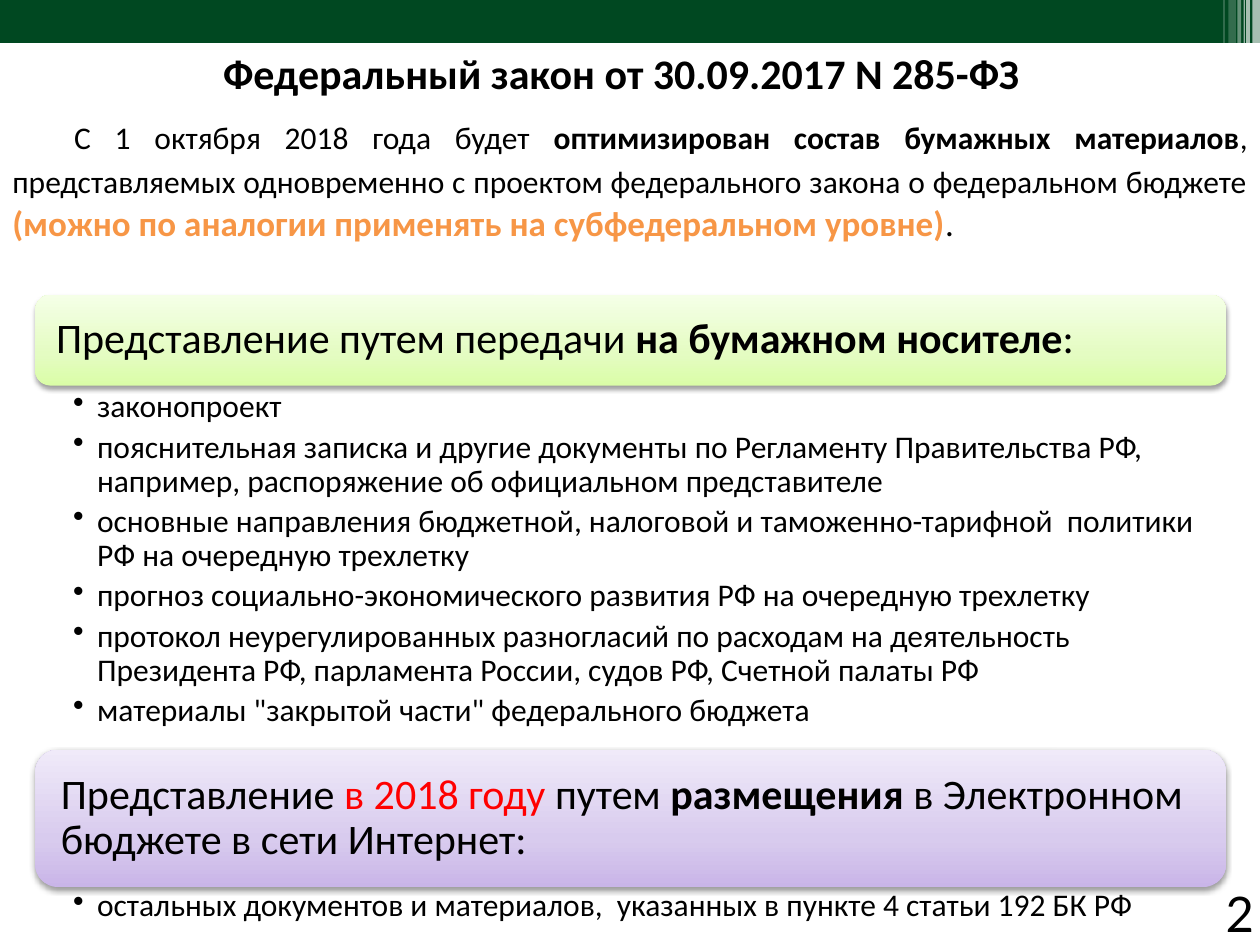
from dataclasses import dataclass
from typing import Optional

from lxml.etree import SubElement
from pptx import Presentation
from pptx.dml.color import RGBColor
from pptx.enum.shapes import MSO_SHAPE as Preset
from pptx.enum.text import MSO_ANCHOR as Anchor, MSO_AUTO_SIZE as AutoSize, PP_ALIGN as Align
from pptx.oxml.ns import qn
from pptx.util import Inches, Pt

BLACK = RGBColor(0x00, 0x00, 0x00)
WHITE = RGBColor(0xFF, 0xFF, 0xFF)
RED = RGBColor(0xFF, 0x00, 0x00)
ORANGE = RGBColor(0xF7, 0x96, 0x46)
DARK_GREEN = RGBColor(0x00, 0x48, 0x21)
GREENS = [RGBColor(0xDA, 0xFD, 0xA7), RGBColor(0xE4, 0xFC, 0xC2), RGBColor(0xF5, 0xFF, 0xE7)]
PURPLES = [RGBColor(0xC9, 0xB5, 0xE8), RGBColor(0xD8, 0xCB, 0xEE), RGBColor(0xF0, 0xEA, 0xF9)]
STOPS = [0, 35, 100]
SECTION_LEFT, SECTION_WIDTH = 0.28, 9.45
BULLET_INDENT = 0.19


@dataclass
class Span:
    text: str
    bold: bool = False
    color: RGBColor = BLACK
    size: Optional[float] = None


@dataclass
class Stripe:
    left: float
    width: float
    height: float
    opacity: int


@dataclass
class Section:
    top: float
    height: float
    inset: float
    colors: list[RGBColor]
    heading: list[Span]
    list_top: float
    list_height: float
    items: list[str]


STRIPES = [
    Stripe(9.94, 0.06, 0.34, 65),
    Stripe(9.89, 0.03, 0.34, 65),
    Stripe(9.87, 0.01, 0.34, 60),
    Stripe(9.82, 0.03, 0.34, 40),
    Stripe(9.75, 0.06, 0.36, 20),
    Stripe(9.71, 0.01, 0.36, 30),
]

INTRO = [
    Span("С 1 октября 2018 года будет "),
    Span("оптимизирован состав бумажных материалов", bold=True),
    Span(", представляемых одновременно с проектом федерального закона о федеральном бюджете "),
    Span("(можно по аналогии применять на субфедеральном уровне)", True, ORANGE, 20),
    Span(".", size=20),
]

SECTIONS = [
    Section(
        2.34, 0.72, 0.13, GREENS,
        [
            Span("Представление путем передачи "),
            Span("на бумажном носителе", bold=True),
            Span(":"),
        ],
        3.07, 2.88,
        [
            "законопроект",
            "пояснительная записка и другие документы по Регламенту Правительства РФ, "
            "например, распоряжение об официальном представителе",
            "основные направления бюджетной, налоговой и таможенно-тарифной  политики "
            "РФ на очередную трехлетку",
            "прогноз социально-экономического развития РФ на очередную трехлетку",
            "протокол неурегулированных разногласий по расходам на деятельность "
            "Президента РФ, парламента России, судов РФ, Счетной палаты РФ",
            "материалы \"закрытой части\" федерального бюджета",
        ],
    ),
    Section(
        5.95, 1.09, 0.15, PURPLES,
        [
            Span("Представление "),
            Span("в 2018 году ", color=RED),
            Span("путем "),
            Span("размещения", bold=True),
            Span(" в Электронном бюджете в сети Интернет:"),
        ],
        7.03, 0.45,
        ["остальных документов и материалов,  указанных в пункте 4 статьи 192 БК РФ"],
    ),
]


def write(para, spans: list[Span], size: float, font: str = "Calibri") -> None:
    for span in spans:
        run = para.add_run()
        run.text = span.text
        run.font.name = font
        run.font.size = Pt(span.size or size)
        run.font.bold = span.bold
        run.font.color.rgb = span.color


def set_insets(frame, left: float, top: float, right: float, bottom: float) -> None:
    frame.margin_left, frame.margin_top = Inches(left), Inches(top)
    frame.margin_right, frame.margin_bottom = Inches(right), Inches(bottom)


def add_box(page, left: float, top: float, width: float, height: float):
    box = page.shapes.add_textbox(Inches(left), Inches(top), Inches(width), Inches(height))
    box.text_frame.word_wrap = True
    return box.text_frame


def add_plain_shape(page, preset, left: float, top: float, width: float, height: float):
    shape = page.shapes.add_shape(
        preset, Inches(left), Inches(top), Inches(width), Inches(height))
    shape.shadow.inherit = False
    shape.line.fill.background()
    return shape


def add_color(parent, color: RGBColor, opacity: int = 100) -> None:
    node = SubElement(parent, qn("a:srgbClr"), val=str(color))
    if opacity < 100:
        SubElement(node, qn("a:alpha"), val=str(opacity * 1000))


def add_header(page) -> None:
    band = add_plain_shape(page, Preset.RECTANGLE, 0, 0, 10, 0.34)
    band.fill.solid()
    band.fill.fore_color.rgb = DARK_GREEN
    for stripe in STRIPES:
        bar = add_plain_shape(page, Preset.RECTANGLE, stripe.left, 0, stripe.width, stripe.height)
        bar.fill.solid()
        bar.fill.fore_color.rgb = WHITE
        fill = bar._element.spPr.find(qn("a:solidFill"))
        fill.clear()
        add_color(fill, WHITE, stripe.opacity)


def add_heading(page, section: Section) -> None:
    panel = add_plain_shape(page, Preset.ROUNDED_RECTANGLE, SECTION_LEFT, section.top,
                            SECTION_WIDTH, section.height)
    panel.fill.gradient()
    panel.fill.gradient_angle = 90
    properties = panel._element.spPr
    stops = properties.find(qn("a:gradFill")).find(qn("a:gsLst"))
    stops.clear()
    for position, color in zip(STOPS, section.colors):
        add_color(SubElement(stops, qn("a:gs"), pos=str(position * 1000)), color)
    shadow = SubElement(properties.find(qn("a:effectLst")), qn("a:outerShdw"),
                        blurRad=str(Pt(3.1)), dist=str(Pt(1.6)), dir="5400000", rotWithShape="0")
    add_color(shadow, BLACK, 38)
    frame = panel.text_frame
    frame.word_wrap = True
    frame.vertical_anchor = Anchor.MIDDLE
    set_insets(frame, section.inset, 0.1, section.inset, 0.1)
    para = frame.paragraphs[0]
    para.alignment = Align.LEFT
    para.line_spacing = 0.9
    write(para, section.heading, 24)


def add_list(page, section: Section) -> None:
    frame = add_box(page, SECTION_LEFT, section.list_top, SECTION_WIDTH, section.list_height)
    set_insets(frame, 0.3, 0.03, 0.14, 0.03)
    for index, item in enumerate(section.items):
        para = frame.add_paragraph() if index else frame.paragraphs[0]
        para.level = 1
        properties = para._p.get_or_add_pPr()
        properties.set("marL", str(Inches(BULLET_INDENT)))
        properties.set("indent", str(-Inches(BULLET_INDENT)))
        SubElement(properties, qn("a:buChar"), char="•")
        para.line_spacing = 0.9
        para.space_after = Pt(3.6)
        write(para, [Span(item)], 18)


def add_title(page) -> None:
    title = page.shapes.title
    title.left, title.top = Inches(1.67), Inches(0.33)
    title.width, title.height = Inches(6.58), Inches(0.5)
    frame = title.text_frame
    frame.word_wrap = False
    frame.auto_size = AutoSize.NONE
    frame.vertical_anchor = Anchor.TOP
    para = frame.paragraphs[0]
    para.alignment = Align.LEFT
    write(para, [Span("Федеральный закон от 30.09.2017 N 285-ФЗ", bold=True)], 24)


def main() -> None:
    deck = Presentation()
    deck.slide_width, deck.slide_height = Inches(10), Inches(7.5)
    page = deck.slides.add_slide(deck.slide_layouts[5])
    add_header(page)
    add_title(page)
    intro = add_box(page, 0, 0.84, 10, 1.15).paragraphs[0]
    intro.alignment = Align.JUSTIFY
    intro.line_spacing = Pt(25)
    intro._p.get_or_add_pPr().set("indent", str(Inches(0.49)))
    write(intro, INTRO, 18)
    for section in SECTIONS:
        add_heading(page, section)
        add_list(page, section)
    number = add_box(page, 9.25, 6.96, 0.8, 0.49).paragraphs[0]
    number.alignment = Align.RIGHT
    write(number, [Span("2")], 28, "Lato")
    deck.save("out.pptx")


if __name__ == "__main__":
    main()
